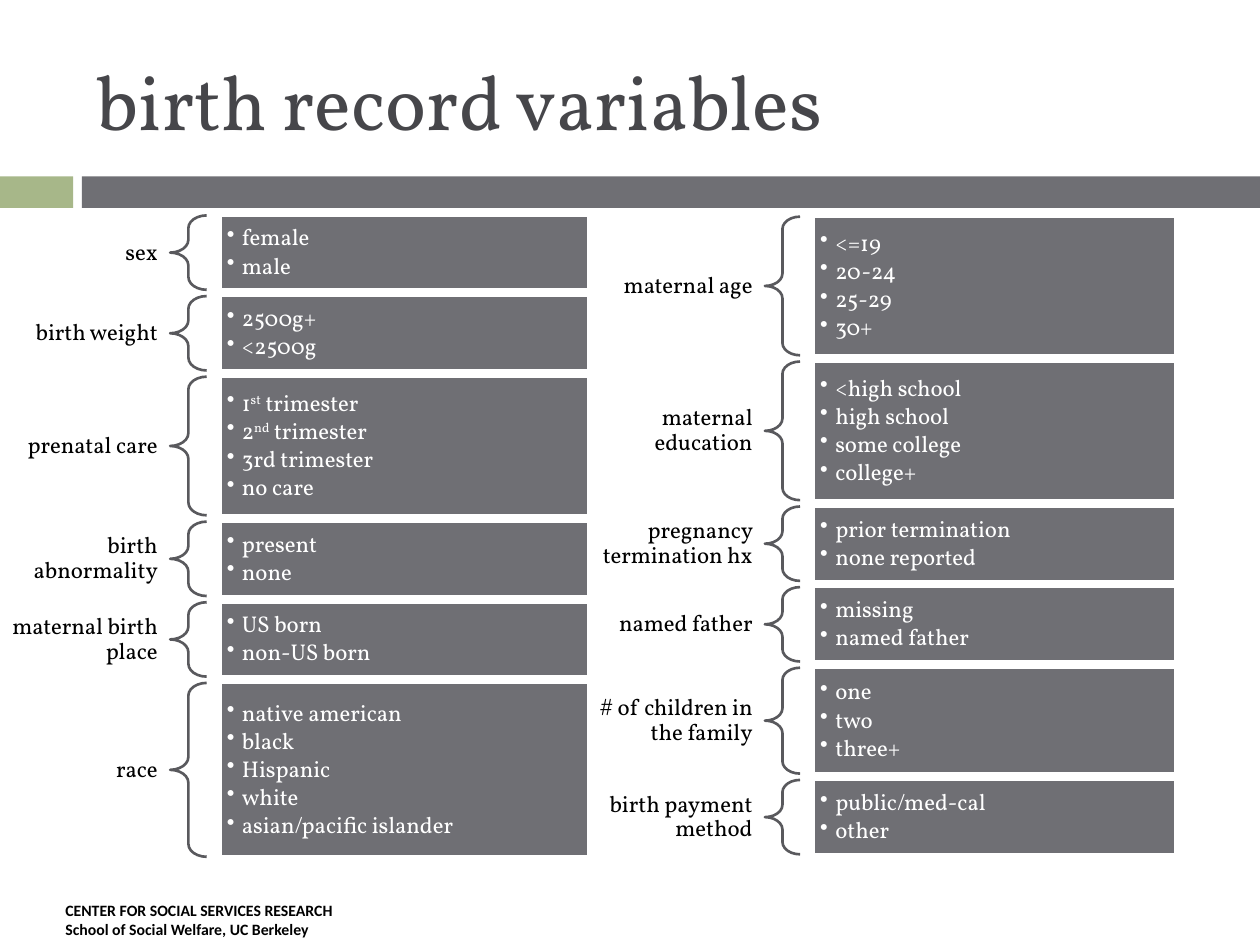
"""Build the slide that lists the birth record variables and their values."""
from lxml.etree import SubElement
from pptx import Presentation
from pptx.dml.color import RGBColor
from pptx.enum.shapes import MSO_SHAPE
from pptx.enum.text import MSO_ANCHOR, PP_ALIGN
from pptx.oxml.ns import qn
from pptx.util import Inches, Pt

TITLE = "birth record variables"
FOOTER = "CENTER FOR SOCIAL SERVICES RESEARCH\vSchool of Social Welfare, UC Berkeley"
LEFT_VARIABLES = [
    ("sex", ["female", "male"]),
    ("birth weight", ["2500g+", "<2500g"]),
    ("prenatal care", ["1^st^ trimester", "2^nd^ trimester", "3rd trimester", "no care"]),
    ("birth abnormality", ["present", "none"]),
    ("maternal birth place", ["US born", "non-US born"]),
    ("race", ["native american", "black", "Hispanic", "white", "asian/pacific islander"]),
]
RIGHT_VARIABLES = [
    ("maternal age", ["<=19", "20-24", "25-29", "30+"]),
    ("maternal education", ["<high school", "high school", "some college", "college+"]),
    ("pregnancy termination hx", ["prior termination", "none reported"]),
    ("named father", ["missing", "named father"]),
    ("# of children in the family", ["one", "two", "three+"]),
    ("birth payment method", ["public/med-cal", "other"]),
]
COLUMNS = [
    dict(variables=LEFT_VARIABLES, top=1.71, label=(-0.09, 1.44),
         brace=(1.35, 0.29), values=(1.75, 2.92)),
    dict(variables=RIGHT_VARIABLES, top=1.72, label=(4.65, 1.42),
         brace=(6.07, 0.28), values=(6.46, 2.87)),
]
ROW_HEIGHTS = {2: 0.59, 3: 0.84, 4: 1.1, 5: 1.38}
ROW_GAP = 0.05
GREEN, GRAY, BRACE_GRAY, TITLE_GRAY = "A7B789", "6F6F74", "59595D", "46464A"
WHITE, BLACK = "FFFFFF", "000000"


def color(hex_code):
    return RGBColor.from_string(hex_code)


def add_preset(slide, preset, left, top, width, height, fill=None, line=None):
    shape = slide.shapes.add_shape(
        preset, Inches(left), Inches(top), Inches(width), Inches(height))
    shape.shadow.inherit = False
    if fill:
        shape.fill.solid()
        shape.fill.fore_color.rgb = color(fill)
    else:
        shape.fill.background()
    if line:
        shape.line.color.rgb = color(line)
        shape.line.width = Pt(1.5)
    else:
        shape.line.fill.background()
    return shape


def add_box(slide, left, top, width, height):
    return slide.shapes.add_textbox(
        Inches(left), Inches(top), Inches(width), Inches(height))


def add_bullet(paragraph):
    properties = paragraph._p.get_or_add_pPr()
    properties.set("marL", str(Inches(0.12)))
    properties.set("indent", str(-Inches(0.12)))
    SubElement(properties, qn("a:buChar")).set("char", "•")


def write(shape, lines, size=13, font="Vollkorn", ink=BLACK, bold=False,
          align=PP_ALIGN.LEFT, anchor=MSO_ANCHOR.MIDDLE, inset=(0.1, 0.05),
          spacing=None, after=0, bullets=False):
    frame = shape.text_frame
    frame.word_wrap = True
    frame.vertical_anchor = anchor
    frame.margin_left = frame.margin_right = Inches(inset[0])
    frame.margin_top = frame.margin_bottom = Inches(inset[1])
    for index, line in enumerate(lines):
        paragraph = frame.add_paragraph() if index else frame.paragraphs[0]
        if bullets:
            add_bullet(paragraph)
        paragraph.alignment = align
        paragraph.line_spacing = spacing
        paragraph.space_after = Pt(after)
        for row, row_text in enumerate(line.split("\v")):
            if row:
                paragraph.add_line_break()
            for part, words in enumerate(row_text.split("^")):
                run = paragraph.add_run()
                run.text = words
                run.font.size = Pt(size)
                run.font.name = font
                run.font.bold = bold
                run.font.color.rgb = color(ink)
                if part % 2:
                    run.font._element.set("baseline", "30000")


def add_column(slide, variables, top, label, brace, values):
    for name, choices in variables:
        height = ROW_HEIGHTS[len(choices)]
        write(add_box(slide, label[0], top, label[1], height), [name],
              align=PP_ALIGN.RIGHT, inset=(0.1, 0.04), spacing=0.9)
        bracket = add_preset(slide, MSO_SHAPE.LEFT_BRACE, brace[0], top, brace[1],
                             height, line=BRACE_GRAY)
        bracket.adjustments[0] = 0.35
        bracket.adjustments[1] = 0.5
        panel = add_preset(slide, MSO_SHAPE.RECTANGLE, values[0], top, values[1],
                           height, fill=GRAY, line=WHITE)
        write(panel, choices, ink=WHITE, inset=(0.05, 0.05), spacing=0.9,
              after=2, bullets=True)
        top += height + ROW_GAP


def main():
    deck = Presentation()
    deck.slide_width, deck.slide_height = Inches(10), Inches(7.5)
    slide = deck.slides.add_slide(deck.slide_layouts[6])
    add_preset(slide, MSO_SHAPE.RECTANGLE, 0, 1.4, 0.58, 0.25, fill=GREEN)
    add_preset(slide, MSO_SHAPE.RECTANGLE, 0.65, 1.4, 9.35, 0.25, fill=GRAY)
    write(add_box(slide, 0.42, 7.1, 2.92, 0.4), [FOOTER], size=9, font="Calibri",
          bold=True, anchor=MSO_ANCHOR.TOP)
    for column in COLUMNS:
        add_column(slide, **column)
    write(add_box(slide, 0.67, 0.25, 8.92, 1.08), [TITLE], size=44, ink=TITLE_GRAY)
    deck.save("out.pptx")


if __name__ == "__main__":
    main()
